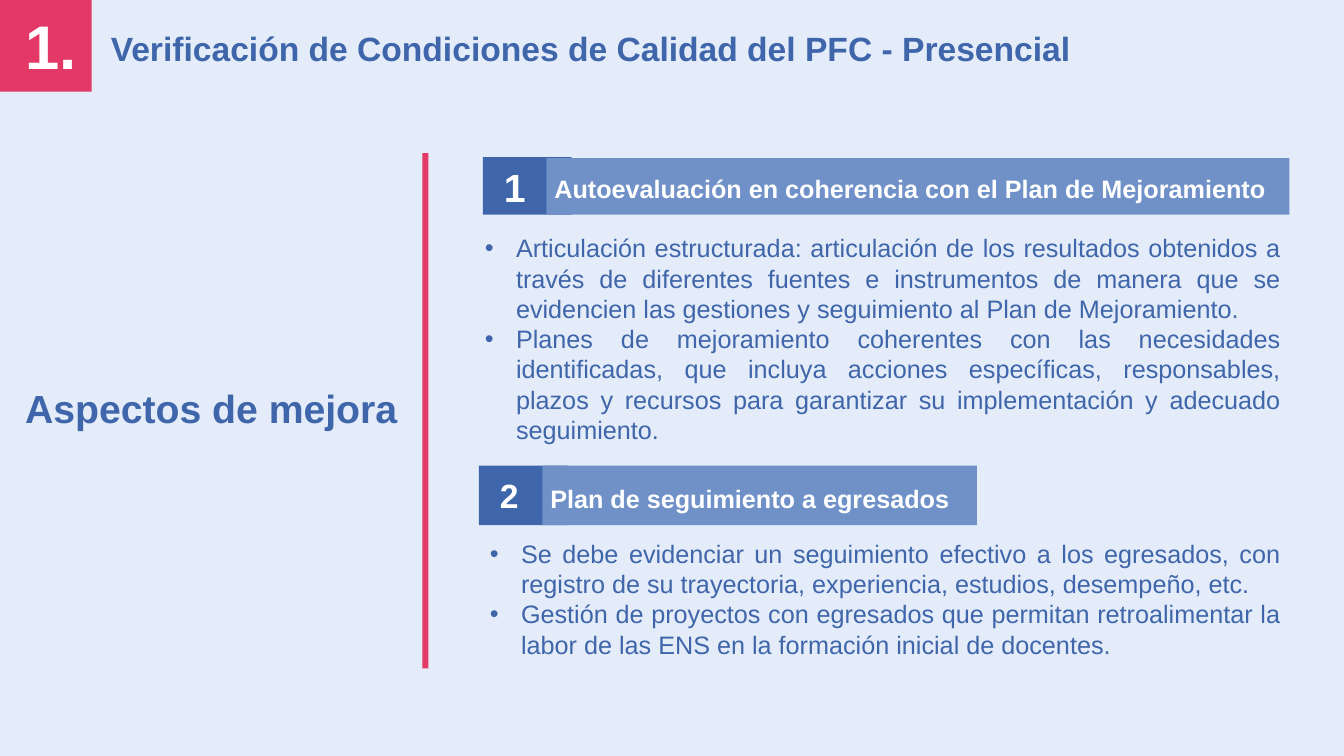
from dataclasses import dataclass

import pptx
import pptx.dml.color
import pptx.enum.shapes
import pptx.enum.text
import pptx.oxml
import pptx.oxml.ns
import pptx.slide
import pptx.text.text
import pptx.util

Inches = pptx.util.Inches
ALIGN = pptx.enum.text.PP_ALIGN

COLORS = {
    "background": "E3ECF8",
    "accent": "E43866",
    "blue": "3F65AA",
    "band": "6F91C8",
    "white": "FFFFFF",
}
FONT = "Arial"
BULLET_INDENT = 0.31


@dataclass(frozen=True)
class Area:
    left: float
    top: float
    width: float
    height: float

    def lengths(self) -> list[pptx.util.Length]:
        return [Inches(n) for n in (self.left, self.top, self.width, self.height)]


@dataclass(frozen=True)
class Block:
    area: Area
    color: str


@dataclass(frozen=True)
class Label:
    area: Area
    lines: tuple[str, ...]
    size: int
    color: str = "blue"
    bold: bool = True
    wrap: bool = True
    justified: bool = False
    bulleted: bool = False


@dataclass(frozen=True)
class Section:
    tile: Block
    band: Block
    number: Label
    heading: Label
    points: Label


def rgb(name: str) -> pptx.dml.color.RGBColor:
    return pptx.dml.color.RGBColor.from_string(COLORS[name])


def draw_block(page: pptx.slide.Slide, block: Block) -> None:
    box = page.shapes.add_shape(
        pptx.enum.shapes.MSO_SHAPE.RECTANGLE, *block.area.lengths()
    )
    box.shadow.inherit = False
    box.fill.solid()
    box.fill.fore_color.rgb = rgb(block.color)
    box.line.fill.background()


def add_bullet(para: pptx.text.text._Paragraph) -> None:
    properties = para._p.get_or_add_pPr()
    properties.set("marL", str(Inches(BULLET_INDENT)))
    properties.set("indent", str(-Inches(BULLET_INDENT)))
    namespace = pptx.oxml.ns.nsdecls("a")
    for tag in (f'a:buFont {namespace} typeface="{FONT}"', f'a:buChar {namespace} char="•"'):
        properties.append(pptx.oxml.parse_xml(f"<{tag}/>"))


def draw_label(page: pptx.slide.Slide, label: Label) -> None:
    box = page.shapes.add_textbox(*label.area.lengths())
    frame = box.text_frame
    frame.word_wrap = label.wrap
    frame.auto_size = pptx.enum.text.MSO_AUTO_SIZE.SHAPE_TO_FIT_TEXT
    for index, line in enumerate(label.lines):
        para = frame.add_paragraph() if index else frame.paragraphs[0]
        para.alignment = ALIGN.JUSTIFY if label.justified else ALIGN.LEFT
        if label.bulleted:
            add_bullet(para)
        span = para.add_run()
        span.text = line
        span.font.name = FONT
        span.font.size = pptx.util.Pt(label.size)
        span.font.bold = label.bold
        span.font.color.rgb = rgb(label.color)


def heading(area: Area, text: str) -> Label:
    return Label(area, (text,), 18, "white", wrap=False)


def points(area: Area, *lines: str) -> Label:
    return Label(area, lines, 18, bold=False, justified=True, bulleted=True)


def draw_section(page: pptx.slide.Slide, section: Section) -> None:
    draw_block(page, section.tile)
    draw_block(page, section.band)
    for label in (section.number, section.heading, section.points):
        draw_label(page, label)


BLOCKS = (
    Block(Area(0, 0, 0.91, 0.91), "accent"),
    Block(Area(4.19, 1.52, 0.06, 5.11), "accent"),
)

TITLES = (
    Label(Area(0.15, 0.03, 0.76, 0.84), ("1.",), 44, "white"),
    Label(
        Area(1, 0.23, 9.98, 0.5),
        ("Verificación de Condiciones de Calidad del PFC - Presencial",),
        24,
    ),
    Label(Area(0.15, 3.76, 3.99, 0.57), ("Aspectos de mejora",), 28, justified=True),
)

SECTIONS = (
    Section(
        tile=Block(Area(4.79, 1.56, 0.88, 0.57), "blue"),
        band=Block(Area(5.42, 1.57, 7.37, 0.56), "band"),
        number=Label(Area(4.9, 1.57, 0.37, 0.57), ("1",), 28, "white"),
        heading=heading(
            Area(5.4, 1.67, 7.4, 0.4),
            "Autoevaluación en coherencia con el Plan de Mejoramiento",
        ),
        points=points(
            Area(4.71, 2.26, 8.09, 2.22),
            "Articulación estructurada: articulación de los resultados obtenidos a "
            "través de diferentes fuentes e instrumentos de manera que se "
            "evidencien las gestiones y seguimiento al Plan de Mejoramiento.",
            "Planes de mejoramiento coherentes con las necesidades "
            "identificadas, que incluya acciones específicas, responsables, "
            "plazos y recursos para garantizar su implementación y adecuado "
            "seguimiento.",
        ),
    ),
    Section(
        tile=Block(Area(4.75, 4.62, 0.88, 0.59), "blue"),
        band=Block(Area(5.38, 4.62, 4.31, 0.59), "band"),
        number=Label(Area(4.86, 4.66, 0.37, 0.5), ("2",), 24, "white"),
        heading=heading(
            Area(5.36, 4.75, 4.2, 0.4), "Plan de seguimiento a egresados"
        ),
        points=points(
            Area(4.76, 5.29, 8.04, 1.31),
            "Se debe evidenciar un seguimiento efectivo a los egresados, con "
            "registro de su trayectoria, experiencia, estudios, desempeño, etc.",
            "Gestión de proyectos con egresados que permitan retroalimentar la "
            "labor de las ENS en la formación inicial de docentes.",
        ),
    ),
)


def main() -> None:
    deck = pptx.Presentation()
    deck.slide_width, deck.slide_height = Inches(13.33), Inches(7.5)
    page = deck.slides.add_slide(deck.slide_layouts[6])
    page.background.fill.solid()
    page.background.fill.fore_color.rgb = rgb("background")

    # Corner tile, divider and titles
    for block in BLOCKS:
        draw_block(page, block)
    for title in TITLES:
        draw_label(page, title)

    # Numbered sections
    for section in SECTIONS:
        draw_section(page, section)

    deck.save("out.pptx")


if __name__ == "__main__":
    main()
